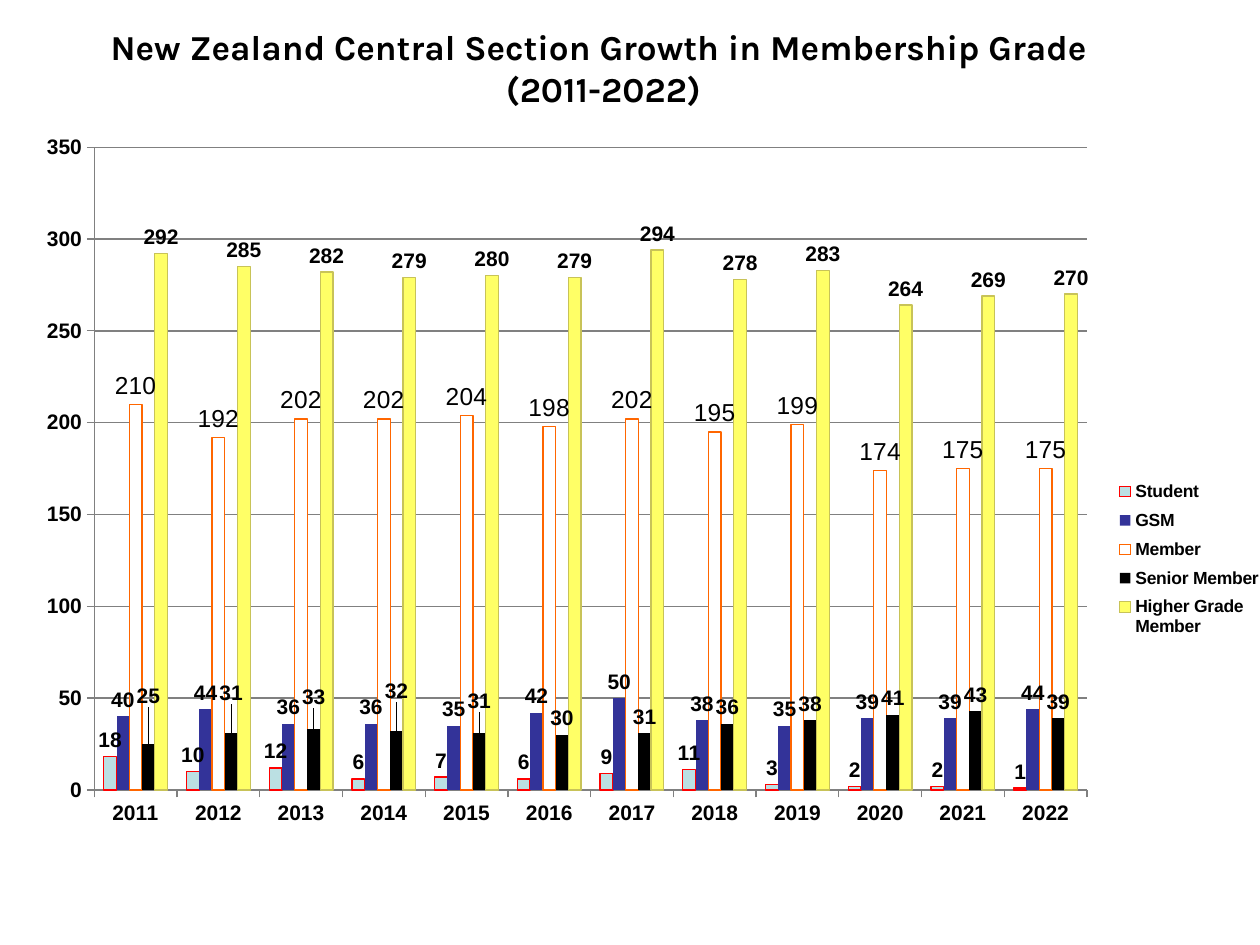
from lxml import etree
from pptx import Presentation
from pptx import util as u
from pptx.chart.data import CategoryChartData
from pptx.dml.color import RGBColor
from pptx.enum import chart as charts, text
from pptx.oxml import ns

BLACK = RGBColor(0, 0, 0)
GREY = RGBColor(0x80, 0x80, 0x80)
WHITE = RGBColor(0xFF, 0xFF, 0xFF)
PALE_TEAL = RGBColor(0xBB, 0xE0, 0xE3)
RED = RGBColor(0xFF, 0, 0)
INDIGO = RGBColor(0x33, 0x33, 0x99)
ORANGE = RGBColor(0xFF, 0x66, 0)
YELLOW = RGBColor(0xFF, 0xFF, 0x66)
OLIVE = RGBColor(0xC8, 0xC3, 0x58)

YEARS = [str(year) for year in range(2011, 2023)]
GRADES = [
    ("Student", PALE_TEAL, RED, [18, 10, 12, 6, 7, 6, 9, 11, 3, 2, 2, 1]),
    ("GSM", INDIGO, None, [40, 44, 36, 36, 35, 42, 50, 38, 35, 39, 39, 44]),
    ("Member", WHITE, ORANGE,
     [210, 192, 202, 202, 204, 198, 202, 195, 199, 174, 175, 175]),
    ("Senior Member", BLACK, None,
     [25, 31, 33, 32, 31, 30, 31, 36, 38, 41, 43, 39]),
    ("Higher Grade Member", YELLOW, OLIVE,
     [292, 285, 282, 279, 280, 279, 294, 278, 283, 264, 269, 270]),
]
SENIOR_LABEL_LIFTS = [-0.04, -0.03, -0.02, -0.03, -0.02]


def set_font(font, size, bold=True, name="Arial"):
    font.name = name
    font.size = u.Pt(size)
    font.bold = bold
    font.color.rgb = BLACK


def make_layout(**settings):
    layout = etree.Element(ns.qn("c:layout"))
    manual = etree.SubElement(layout, ns.qn("c:manualLayout"))
    for tag, value in settings.items():
        etree.SubElement(manual, ns.qn(f"c:{tag}")).set("val", str(value))
    return layout


def place_plot(chart):
    area = chart._chartSpace.chart.plotArea
    for layout in area.findall(ns.qn("c:layout")):
        area.remove(layout)
    area.insert(0, make_layout(layoutTarget="inner", xMode="edge", yMode="edge",
                               x=0.096, y=0.027, w=0.756, h=0.816))


def add_title(page, words):
    title = page.shapes.title
    title.left, title.top = u.Cm(1.27), u.Cm(0.43)
    title.width, title.height = u.Cm(21.79), u.Cm(1.85)
    frame = title.text_frame
    frame.text = words
    frame.word_wrap = True
    frame.auto_size = text.MSO_AUTO_SIZE.NONE
    frame.vertical_anchor = text.MSO_ANCHOR.MIDDLE
    paragraph = frame.paragraphs[0]
    paragraph.alignment = text.PP_ALIGN.CENTER
    set_font(paragraph.font, 20, name="Karla")


def format_axis(axis):
    axis.major_tick_mark = charts.XL_TICK_MARK.OUTSIDE
    axis.minor_tick_mark = charts.XL_TICK_MARK.NONE
    axis.format.line.color.rgb = GREY
    axis.format.line.width = u.Pt(0.75)
    set_font(axis.tick_labels.font, 12)


def format_series(series, fill, outline):
    series.format.fill.solid()
    series.format.fill.fore_color.rgb = fill
    series.invert_if_negative = False
    if outline is None:
        series.format.line.fill.background()
    else:
        series.format.line.color.rgb = outline
        series.format.line.width = u.Pt(0.75)
    labels = series.data_labels
    labels.show_value = True
    labels.position = charts.XL_LABEL_POSITION.OUTSIDE_END
    is_member = series.name == "Member"
    set_font(labels.font, 14 if is_member else 12, bold=not is_member)


def lift_labels(series, lifts):
    for index, lift in enumerate(lifts):
        label = series.points[index].data_label
        set_font(label.font, 12)
        label.position = charts.XL_LABEL_POSITION.OUTSIDE_END
    for element, lift in zip(series.data_labels._element.findall(ns.qn("c:dLbl")), lifts):
        element.insert(1, make_layout(x=0, y=lift))


def add_legend(chart):
    chart.has_legend = True
    legend = chart.legend
    legend.position = charts.XL_LEGEND_POSITION.RIGHT
    legend.include_in_layout = False
    set_font(legend.font, 10)
    position = legend._element.find(ns.qn("c:legendPos"))
    position.addnext(make_layout(xMode="edge", yMode="edge",
                                 x=0.86, y=0.44, w=0.14, h=0.22))


def add_membership_chart(page):
    data = CategoryChartData(number_format="General")
    data.categories = YEARS
    for name, _, _, values in GRADES:
        data.add_series(name, values)
    chart = page.shapes.add_chart(
        charts.XL_CHART_TYPE.COLUMN_CLUSTERED,
        u.Cm(-0.64), u.Cm(2.54), u.Cm(26.47), u.Cm(15.88), data).chart
    chart.has_title = False
    set_font(chart.font, 18, bold=False)
    place_plot(chart)
    add_legend(chart)

    format_axis(chart.category_axis)
    axis = chart.value_axis
    format_axis(axis)
    axis.minimum_scale, axis.maximum_scale, axis.major_unit = 0, 350, 50
    axis.tick_labels.number_format = "#,##0"
    axis.tick_labels.number_format_is_linked = False
    axis.has_major_gridlines = True
    axis.major_gridlines.format.line.color.rgb = GREY
    axis.major_gridlines.format.line.width = u.Pt(0.75)

    plot = chart.plots[0]
    plot.gap_width = 150
    plot.overlap = 0
    plot.vary_by_categories = False
    for series, (_, fill, outline, _) in zip(plot.series, GRADES):
        format_series(series, fill, outline)
        if series.name == "Senior Member":
            lift_labels(series, SENIOR_LABEL_LIFTS)


def main():
    deck = Presentation()
    deck.slide_width, deck.slide_height = u.Cm(25.4), u.Cm(19.05)
    page = deck.slides.add_slide(deck.slide_layouts[5])
    add_title(page, "New Zealand Central Section Growth in Membership Grade \v(2011-2022)")
    add_membership_chart(page)
    deck.save("out.pptx")


if __name__ == "__main__":
    main()
